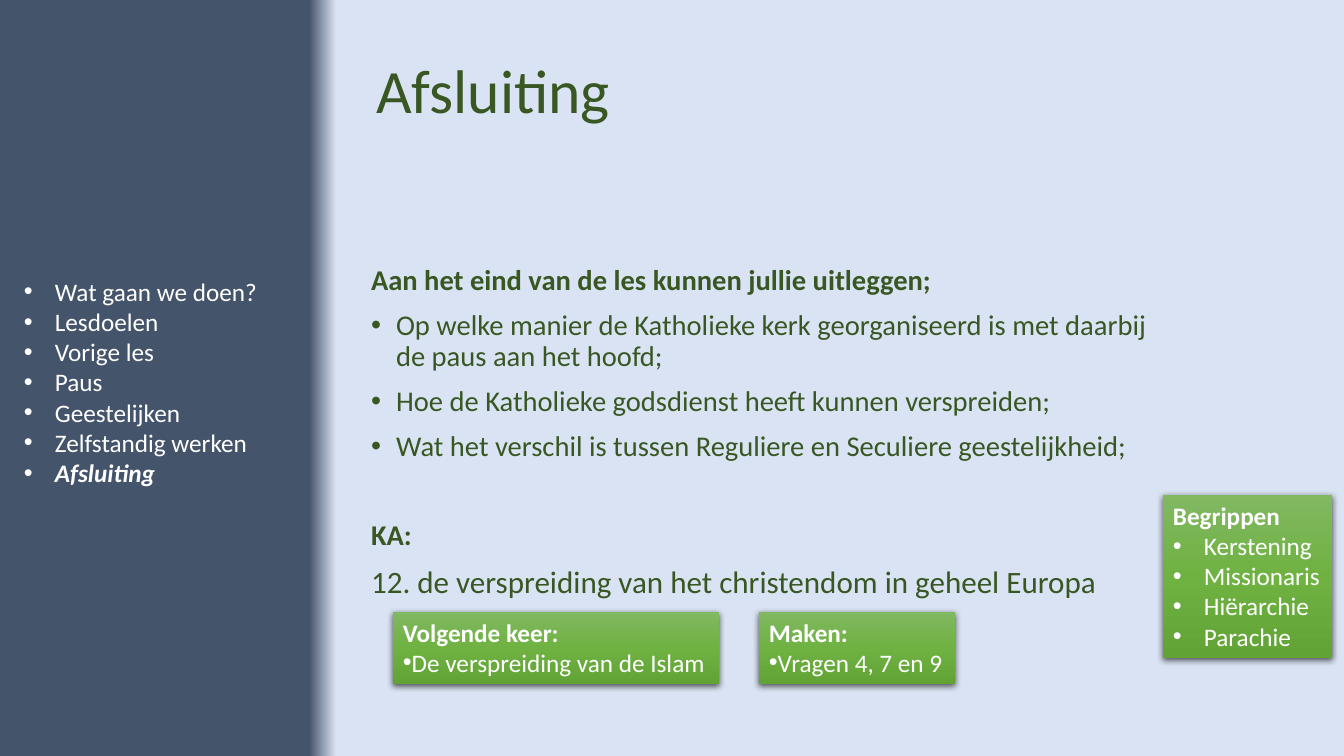
from copy import deepcopy

from lxml.etree import SubElement
from pptx import Presentation
from pptx.dml.color import RGBColor
from pptx.enum.shapes import MSO_SHAPE
from pptx.enum.text import MSO_ANCHOR, MSO_AUTO_SIZE, PP_ALIGN
from pptx.oxml.ns import qn
from pptx.util import Pt

COLORS = {"navy": "44546A", "pale": "DAE3F3", "text": "385723", "white": "FFFFFF",
          "green_top": "81B861", "green_middle": "6FB242", "green_bottom": "62A336",
          "shadow": "000000"}
FONT = "Calibri"
EMU_PER_PX = 914400 / 100.8
BULLET_INDENT = 31
BODY_INDENT = 25

TITLE = ("Afsluiting", (366, 21, 927, 146))
BODY_BOX = (361, 261, 796, 362)
# text, size, bold, bulleted, space before
BODY = [
    ("Aan het eind van de les kunnen jullie uitleggen;", 20.4, True, False, 10),
    ("Op welke manier de Katholieke kerk georganiseerd is met daarbij de paus aan het hoofd;",
     20.4, False, True, 10),
    ("Hoe de Katholieke godsdienst heeft kunnen verspreiden;", 20.4, False, True, 10),
    ("Wat het verschil is tussen Reguliere en Seculiere geestelijkheid;", 20.4, False, True, 10),
    ("KA:", 20.4, True, False, 42),
    ("12. de verspreiding van het christendom in geheel Europa", 22.2, False, False, 10),
]
AGENDA = ["Wat gaan we doen?", "Lesdoelen", "Vorige les", "Paus", "Geestelijken",
          "Zelfstandig werken", "Afsluiting"]
AGENDA_BOX = (14, 271, 257, 224)
# heading, items, bullet indent, box
CARDS = [
    ("Volgende keer:", ["De verspreiding van de Islam"], 0, (393, 612, 326, 72)),
    ("Maken:", ["Vragen 4, 7 en 9"], 0, (759, 612, 196, 72)),
    ("Begrippen", ["Kerstening", "Missionaris", "Hiërarchie", "Parachie"],
     BULLET_INDENT, (1163, 495, 169, 163)),
]
BACKGROUND_STOPS = [(0.23, "navy"), (0.25, "pale")]
CARD_STOPS = [(0, "green_top"), (0.5, "green_middle"), (1, "green_bottom")]


def px(length):
    return round(length * EMU_PER_PX)


def place(shape, box):
    shape.left, shape.top, shape.width, shape.height = map(px, box)


def paint_gradient(fill, owner, stops, angle):
    """Fill with any number of stops; owner is the element that holds the fill."""
    fill.gradient()
    fill.gradient_angle = angle
    stop_list = next(owner.iter(qn("a:gsLst")))
    while len(stop_list) < len(stops):
        stop_list.append(deepcopy(stop_list[0]))
    for stop, (position, color) in zip(fill.gradient_stops, stops):
        stop.position = position
        stop.color.rgb = RGBColor.from_string(COLORS[color])


def add_card_shadow(shape):
    shape.shadow.inherit = False
    effects = shape._element.spPr.find(qn("a:effectLst"))
    shadow = SubElement(effects, qn("a:outerShdw"), blurRad=str(Pt(4.5)), dist=str(Pt(1.5)),
                        dir="5400000", algn="ctr", rotWithShape="0")
    color = SubElement(shadow, qn("a:srgbClr"), val=COLORS["shadow"])
    SubElement(color, qn("a:alpha"), val="63000")


def set_bullet(paragraph, indent):
    """Bullet with a hanging indent in px; None removes bullet and indent."""
    properties = paragraph._p.get_or_add_pPr()
    properties.set("marL", str(px(indent or 0)))
    properties.set("indent", str(-px(indent or 0)))
    if indent is None:
        SubElement(properties, qn("a:buNone"))
    else:
        SubElement(properties, qn("a:buFont"), typeface="Arial")
        SubElement(properties, qn("a:buChar"), char="•")


def write_paragraphs(text_frame, lines):
    """Write (text, size, bold, color, bullet indent) lines and return the paragraphs."""
    text_frame.text = "\n".join(line[0] for line in lines)
    for paragraph, (_, size, bold, color, indent) in zip(text_frame.paragraphs, lines):
        set_bullet(paragraph, indent)
        paragraph.alignment = PP_ALIGN.LEFT
        font = paragraph.font
        font.name, font.size, font.bold = FONT, Pt(size), bold
        font.color.rgb = RGBColor.from_string(COLORS[color])
    return text_frame.paragraphs


def fit_to_text(text_frame):
    text_frame.word_wrap = False
    text_frame.auto_size = MSO_AUTO_SIZE.SHAPE_TO_FIT_TEXT
    text_frame.vertical_anchor = MSO_ANCHOR.TOP


def add_card(slide, heading, items, indent, box):
    card = slide.shapes.add_shape(MSO_SHAPE.RECTANGLE, *map(px, box))
    paint_gradient(card.fill, card._element, CARD_STOPS, 270)
    card.line.fill.background()
    add_card_shadow(card)
    fit_to_text(card.text_frame)
    write_paragraphs(card.text_frame, [(heading, 18, True, "white", None)]
                     + [(item, 18, False, "white", indent) for item in items])


def main():
    presentation = Presentation()
    presentation.slide_width, presentation.slide_height = px(1344), px(756)
    slide = presentation.slides.add_slide(presentation.slide_layouts[1])
    paint_gradient(slide.background.fill, slide._element, BACKGROUND_STOPS, 0)

    title, body = slide.placeholders
    title_text, title_box = TITLE
    for placeholder, box, anchor, lines in (
        (title, title_box, MSO_ANCHOR.MIDDLE, [(title_text, 44, False, "text", None)]),
        (body, BODY_BOX, MSO_ANCHOR.TOP,
         [(text, size, bold, "text", BODY_INDENT if bulleted else None)
          for text, size, bold, bulleted, _ in BODY]),
    ):
        place(placeholder, box)
        placeholder.text_frame.auto_size = MSO_AUTO_SIZE.NONE
        placeholder.text_frame.vertical_anchor = anchor
        for paragraph in write_paragraphs(placeholder.text_frame, lines):
            paragraph.line_spacing = 0.9
    for paragraph, line in zip(body.text_frame.paragraphs, BODY):
        paragraph.space_before = Pt(line[-1])

    for card in CARDS:
        add_card(slide, *card)

    agenda = slide.shapes.add_textbox(*map(px, AGENDA_BOX))
    fit_to_text(agenda.text_frame)
    current = write_paragraphs(agenda.text_frame, [
        (item, 18, item == title_text, "white", BULLET_INDENT) for item in AGENDA])[-1]
    current.font.italic = True

    presentation.save("out.pptx")


if __name__ == "__main__":
    main()
